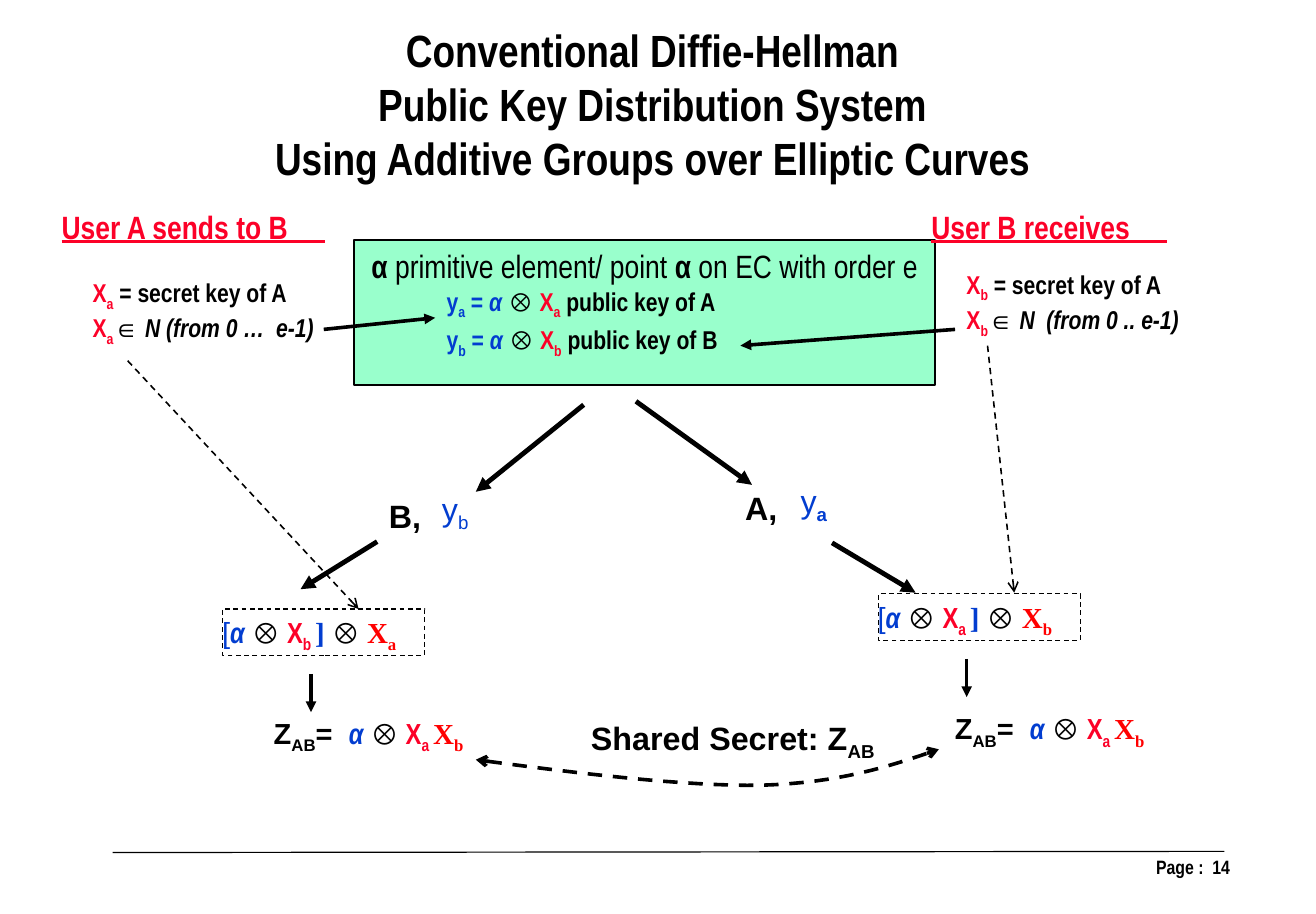
from lxml import etree
from pptx import Presentation
from pptx.dml.color import RGBColor
from pptx.enum.dml import MSO_LINE
from pptx.enum.shapes import MSO_CONNECTOR, MSO_SHAPE
from pptx.enum.text import MSO_ANCHOR, MSO_AUTO_SIZE, PP_ALIGN
from pptx.oxml.ns import qn
from pptx.util import Inches, Pt

DASH = MSO_LINE.DASH
LEFT, CENTER, RIGHT = PP_ALIGN.LEFT, PP_ALIGN.CENTER, PP_ALIGN.RIGHT
TOP, MIDDLE = MSO_ANCHOR.TOP, MSO_ANCHOR.MIDDLE
RECTANGLE, STRAIGHT = MSO_SHAPE.RECTANGLE, MSO_CONNECTOR.STRAIGHT
FIT_SHAPE = MSO_AUTO_SIZE.SHAPE_TO_FIT_TEXT
TITLE_ONLY = 5

CELL = 0.1
COLUMNS, ROWS = 113.4, 78.8
BLACK, BLUE, CRIMSON, RED, MINT = "000000", "023DD0", "FC0128", "FF0000", "99FFCC"
NARROW, SANS, SERIF = "Arial Narrow", "Arial", "Times New Roman"

ALPHA = ("α ", dict(color=BLUE, italic=True))
TIMES = ("⊗ ", {})


def grid(*cells):
    """Turn counts of grid cells into lengths."""
    return [Inches(cell * CELL) for cell in cells]


def rgb(value):
    """Turn a hex string into a colour."""
    return RGBColor.from_string(value)


def add_run(paragraph, text, size=18, font=NARROW, color=BLACK, bold=True,
            italic=False, underline=False, subscript=False):
    """Add formatted text to a paragraph."""
    run = paragraph.add_run()
    run.text = text
    run.font.size, run.font.name = Pt(size), font
    run.font.bold, run.font.italic = bold, italic
    run.font.underline = underline
    run.font.color.rgb = rgb(color)
    if subscript:
        run.font._element.set("baseline", "-25000")


def fill_text(shape, lines, align=LEFT, anchor=TOP, wrap=True, **base):
    """Write lines, each a list of (text, format) runs, into a shape."""
    frame = shape.text_frame
    frame.word_wrap, frame.vertical_anchor = wrap, anchor
    frame.auto_size = FIT_SHAPE
    for index, runs in enumerate(lines):
        paragraph = frame.add_paragraph() if index else frame.paragraphs[0]
        paragraph.alignment = align
        for text, style in runs:
            add_run(paragraph, text, **{**base, **style})


def add_text(slide, box, lines, **options):
    """Add a text box on the grid."""
    shape = slide.shapes.add_textbox(*grid(*box))
    fill_text(shape, lines, **options)
    return shape


def style_line(shape, width, dash=None, head=None, tail=None):
    """Format a black outline with optional dashes and arrowheads."""
    shape.line.color.rgb = rgb(BLACK)
    shape.line.width = Pt(width)
    if dash:
        shape.line.dash_style = dash
    outline = shape.element.spPr.find(qn("a:ln"))
    for tag, kind in (("a:headEnd", head), ("a:tailEnd", tail)):
        if kind:
            etree.SubElement(outline, qn(tag)).set("type", kind)


def add_line(slide, start, end, width, dash=None, tail="triangle"):
    """Add a straight line that points at its end."""
    connector = slide.shapes.add_connector(STRAIGHT, *grid(*start, *end))
    style_line(connector, width, dash, tail=tail)
    etree.SubElement(connector.element.spPr, qn("a:effectLst"))


def add_box(slide, box, width, fill=None, dash=None):
    """Add an outlined rectangle."""
    shape = slide.shapes.add_shape(RECTANGLE, *grid(*box))
    shape.shadow.inherit = False
    if fill:
        shape.fill.solid()
        shape.fill.fore_color.rgb = rgb(fill)
    else:
        shape.fill.background()
    style_line(shape, width, dash)


def bezier(points, steps=16):
    """Sample a cubic curve after its starting point."""
    for step in range(1, steps + 1):
        t = step / steps
        weights = ((1 - t) ** 3, 3 * t * (1 - t) ** 2, 3 * t * t * (1 - t), t ** 3)
        yield grid(*(sum(w * p[axis] for w, p in zip(weights, points)) for axis in (0, 1)))


def add_secret_curve(slide):
    """Join both shared secrets with a dashed two-way curve."""
    start, bottom, end = (41, 65.5), (65.6, 67.7), (80.9, 64.6)
    vertices = [*bezier((start, (50, 66.7), (59, 67.8), bottom)),
                *bezier((bottom, (72.3, 67.5), (76.6, 66.1), end))]
    builder = slide.shapes.build_freeform(*grid(*start))
    builder.add_line_segments(vertices, close=False)
    curve = builder.convert_to_shape()
    curve.shadow.inherit = False
    curve.fill.background()
    style_line(curve, 2.25, DASH, head="arrow", tail="arrow")


def symbol(letter, index, **style):
    """Return the runs of a letter with a subscript."""
    return [(letter, style), (index, dict(style, subscript=True))]


def add_heading(slide, box, text):
    """Add an underlined user heading."""
    add_text(slide, box, [[(text, {})]], align=CENTER, size=20, color=CRIMSON, underline=True)


def add_secret_key(slide, left, top, user, key_range):
    """Describe the secret key of one user."""
    key = symbol("X", user, color=CRIMSON)
    lines = [key + [(" = secret key of A", {})],
             key + [("∈ ", {}), (key_range, dict(italic=True))]]
    add_text(slide, (left, top, 25, 6.4), lines, anchor=MIDDLE, size=16)


def add_public_key(slide, top, user):
    """State the public key of one user."""
    runs = [*symbol("y", user, color=BLUE), (" = ", dict(color=BLUE)), ALPHA, TIMES,
            *symbol("X", user, color=CRIMSON), (f" public key of {user.upper()}", {})]
    add_text(slide, (37.5, top, 33.3, 3.7), [runs], anchor=MIDDLE, size=16)


def add_exchange(slide, user, user_at, key, key_at, bold):
    """Label a branch with its user and public key."""
    add_text(slide, (*user_at, 4.8, 4.4), [[(f"{user},", {})]], align=CENTER, wrap=False,
             size=20, font=SANS)
    runs = [("y", dict(bold=False)), (key, dict(bold=bold, subscript=True))]
    add_text(slide, (*key_at, 4.5, 4.4), [runs], wrap=False, size=20, font=SANS, color=BLUE)


def add_computation(slide, left, top, other, own, result_at):
    """Show how one user derives the shared secret."""
    add_box(slide, (left, top, 17.4, 4), 0.75, dash=DASH)
    runs = [("[", dict(font=SANS, color=BLUE, bold=False)), ALPHA, TIMES,
            *symbol("X", f"{other} ", color=CRIMSON), ("]", dict(font=SERIF, color=BLUE)),
            (" ⊗ ", {}), *symbol("X", own, font=SERIF, color=RED)]
    add_text(slide, (left - 3.2, top, 21.3, 4), [runs], align=CENTER)
    add_line(slide, (left + 7.6, top + 5.6), (left + 7.6, top + 8.9), 2.25)
    result = [*symbol("Z", "AB", font=SANS), ("=  ", dict(font=SANS)), ALPHA, TIMES,
              *symbol("X", "a ", color=CRIMSON), *symbol("X", "b", font=SERIF, color=RED)]
    add_text(slide, (*result_at, 20.9, 4), [result])


def add_title(slide):
    """Place and write the slide title."""
    title = slide.shapes.title
    title.left, title.top, title.width, title.height = grid(6.2, 1.4, 100.9, 15.1)
    lines = ("Conventional Diffie-Hellman ", "Public Key Distribution System ",
             "Using Additive Groups over Elliptic Curves ")
    fill_text(title, [[(line, {})] for line in lines], align=CENTER, size=28)


def add_footer(slide):
    """Add the footer rule and page number."""
    footer = add_text(slide, (81.4, 73.1, 25.8, 5.2), [[("Page :  14", {})]], align=RIGHT, size=12)
    frame = footer.text_frame
    frame.margin_left = frame.margin_right = Inches(0.12)
    frame.margin_top = frame.margin_bottom = Inches(0.06)
    add_line(slide, (9.7, 73.5), (105.5, 73.4), 0.75, tail=None)


def add_public_directory(slide):
    """Add the green box with the public parameters."""
    add_box(slide, (30.5, 20.7, 50.1, 12.5), 1.5, fill=MINT)
    plain = dict(bold=False)
    runs = [("α", {}), (" primitive element/ point ", plain), ("α", {}),
            (" on EC with order e", plain)]
    add_text(slide, (30.5, 20.7, 50.1, 4.4), [runs], align=CENTER, anchor=MIDDLE,
             wrap=False, size=20)
    add_public_key(slide, 24.3, "a")
    add_public_key(slide, 27.6, "b")


def main():
    """Build the slide and save it."""
    presentation = Presentation()
    presentation.slide_width, presentation.slide_height = grid(COLUMNS, ROWS)
    slide = presentation.slides.add_slide(presentation.slide_layouts[TITLE_ONLY])
    add_title(slide)
    add_footer(slide)
    add_public_directory(slide)
    add_heading(slide, (0, 17.4, 33.3, 4.3), "User A sends to B     ")
    add_heading(slide, (75.8, 17.4, 29.2, 4.3), "User B receives     ")
    add_secret_key(slide, 7, 23.7, "a", "N (from 0 …  e-1)")
    add_secret_key(slide, 82.3, 23, "b", "N  (from 0 .. e-1)")
    add_exchange(slide, "B", (32.5, 42.3), "b", (37.1, 41.7), bold=False)
    add_exchange(slide, "A", (63.2, 41.6), "a", (68, 41), bold=True)
    add_computation(slide, 19.2, 52.5, "b", "a", (22.6, 61.2))
    add_computation(slide, 75.7, 51.2, "a", "b", (81.3, 60.8))
    for start, end in (((50.3, 34.9), (41, 42.4)), ((54.8, 34.6), (64.8, 41.8)),
                       ((32.5, 46.7), (25.9, 50.8)), ((71.7, 46.8), (78.9, 51.1))):
        add_line(slide, start, end, 3)
    for start, end in (((27.9, 28.4), (37.5, 27.4)), ((82.3, 28.4), (63.8, 29.8))):
        add_line(slide, start, end, 2.25)
    for start, end in (((11, 31.1), (30.9, 52.5)), ((85.1, 29.8), (87.4, 51.1))):
        add_line(slide, start, end, 1, DASH, "arrow")
    add_secret_curve(slide)
    add_text(slide, (49.4, 61.4, 27.5, 4.4), [symbol("Shared Secret: Z", "AB")],
             align=CENTER, size=20, font=SANS)
    presentation.save("out.pptx")


if __name__ == "__main__":
    main()
